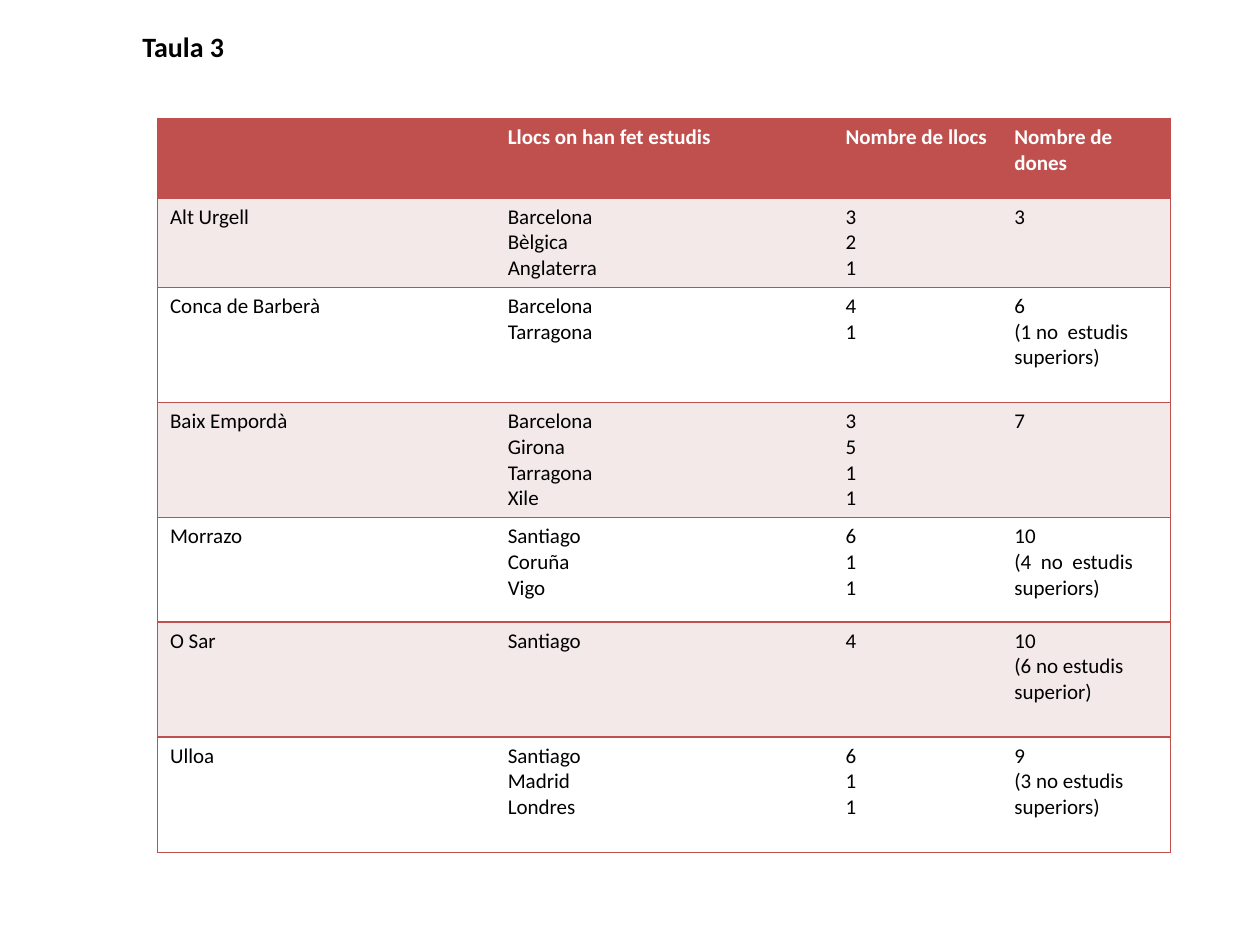
"""Builds the slide "Taula 3": a table of the places where women studied, by district."""
import lxml.etree
import pptx
import pptx.dml.color
import pptx.enum.text
import pptx.oxml.ns
import pptx.util

Pt = pptx.util.Pt
FONT = "Calibri"
RED, PINK, WHITE, BLACK = "C0504D", "F4E9E9", "FFFFFF", "000000"
TITLE = "Taula 3"
HEADER = ("", "Llocs on han fet estudis", "Nombre de llocs", "Nombre de dones")
DISTRICTS = [
    ("Alt Urgell", [("Barcelona", 3), ("Bèlgica", 2), ("Anglaterra", 1)], ["3"]),
    ("Conca de Barberà", [("Barcelona", 4), ("Tarragona", 1)],
     ["6", "(1 no  estudis superiors)"]),
    ("Baix Empordà", [("Barcelona", 3), ("Girona", 5), ("Tarragona", 1), ("Xile", 1)], ["7"]),
    ("Morrazo", [("Santiago", 6), ("Coruña", 1), ("Vigo", 1)],
     ["10", "(4  no  estudis superiors)"]),
    ("O Sar", [("Santiago", 4)], ["10", "(6 no estudis superior)"]),
    ("Ulloa", [("Santiago", 6), ("Madrid", 1), ("Londres", 1)],
     ["9", "(3 no estudis superiors)"]),
]
COLUMN_WIDTHS = (193, 193, 96.5, 96.5)
ROW_HEIGHTS = (45.4, 51.2, 65.8, 65.8, 59.6, 65.8, 65.8)


def rgb(value):
    return pptx.dml.color.RGBColor.from_string(value)


def write(frame, lines, size, color, bold):
    for index, line in enumerate(lines):
        para = frame.add_paragraph() if index else frame.paragraphs[0]
        span = para.add_run()
        span.text = line
        span.font.name = FONT
        span.font.size = Pt(size)
        span.font.bold = bold
        span.font.color.rgb = rgb(color)


def set_borders(cell, visible):
    qn = pptx.oxml.ns.qn
    properties = cell._tc.get_or_add_tcPr()
    for position, side in enumerate("LRTB"):
        line = lxml.etree.Element(qn(f"a:ln{side}"), w=str(Pt(1)))
        if side in visible:
            fill = lxml.etree.SubElement(line, qn("a:solidFill"))
            lxml.etree.SubElement(fill, qn("a:srgbClr"), val=RED)
        else:
            lxml.etree.SubElement(line, qn("a:noFill"))
        properties.insert(position, line)


def add_title(page):
    box = page.shapes.title
    box.left, box.top, box.width, box.height = Pt(74.2), Pt(13), Pt(594.7), Pt(46)
    frame = box.text_frame
    frame.word_wrap = True
    frame.auto_size = pptx.enum.text.MSO_AUTO_SIZE.NONE
    frame.vertical_anchor = pptx.enum.text.MSO_ANCHOR.TOP
    write(frame, [TITLE], 16, BLACK, True)
    frame.paragraphs[0].alignment = pptx.enum.text.PP_ALIGN.JUSTIFY


def add_study_table(page):
    rows = [[[text] if text else [] for text in HEADER]]
    for district, places, women in DISTRICTS:
        names = [name for name, count in places]
        counts = [str(count) for name, count in places]
        rows.append([[district], names, counts, women])
    table = page.shapes.add_table(
        len(rows), len(HEADER), Pt(90), Pt(67.7),
        Pt(sum(COLUMN_WIDTHS)), Pt(sum(ROW_HEIGHTS))).table
    for column, width in zip(table.columns, COLUMN_WIDTHS):
        column.width = Pt(width)
    for row, height in zip(table.rows, ROW_HEIGHTS):
        row.height = Pt(height)
    outer_sides = {0: "L", len(HEADER) - 1: "R"}
    for row_index, row in enumerate(rows):
        is_header = row_index == 0
        fill = RED if is_header else (WHITE, PINK)[row_index % 2]
        for column_index, lines in enumerate(row):
            cell = table.cell(row_index, column_index)
            cell.fill.solid()
            cell.fill.fore_color.rgb = rgb(fill)
            set_borders(cell, "TB" + outer_sides.get(column_index, ""))
            write(cell.text_frame, lines, 12, WHITE if is_header else BLACK, is_header)


def main():
    deck = pptx.Presentation()
    deck.slide_width, deck.slide_height = Pt(720), Pt(540)
    page = deck.slides.add_slide(deck.slide_layouts.get_by_name("Title Only"))
    add_title(page)
    add_study_table(page)
    deck.save("out.pptx")


if __name__ == "__main__":
    main()
